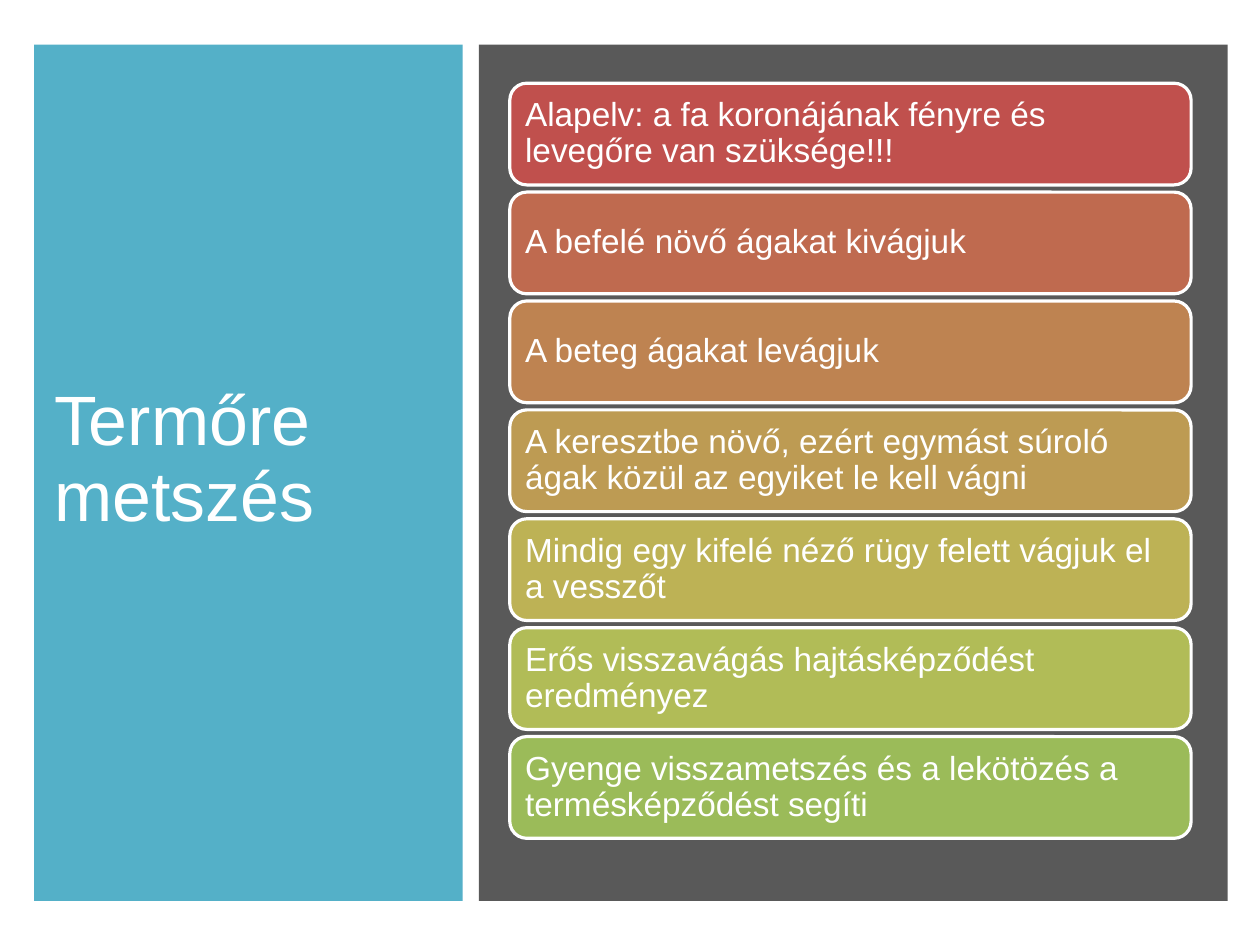
from dataclasses import dataclass

from lxml import etree
from pptx import Presentation
from pptx.dml.color import RGBColor
from pptx.enum import shapes, text
from pptx.oxml import ns
from pptx.util import Cm, Pt


@dataclass(frozen=True)
class Theme:
    font: str = "Arial"
    title_size: int = 44
    rule_size: int = 21
    line_spacing: float = 0.9
    light: str = "FFFFFF"
    title_panel: str = "4BACC6"
    rules_panel: str = "595959"
    rule_fills: tuple = ("C0504D", "BF6A4F", "BE8351", "BD9B53",
                         "BDB255", "B1BC57", "9BBB59")


THEME = Theme()

TITLE = "Termőre metszés"
RULES = (
    "Alapelv: a fa koronájának fényre és levegőre van szüksége!!!",
    "A befelé növő ágakat kivágjuk",
    "A beteg ágakat levágjuk",
    "A keresztbe növő, ezért egymást súroló ágak közül az egyiket le kell vágni",
    "Mindig egy kifelé néző rügy felett vágjuk el a vesszőt",
    "Erős visszavágás hajtásképződést eredményez",
    "Gyenge visszametszés és a lekötözés a termésképződést segíti",
)


def add_box(slide, kind, left, top, width, height, fill):
    shape = slide.shapes.add_shape(kind, left, top, width, height)
    shape.shadow.inherit = False
    shape.fill.solid()
    shape.fill.fore_color.rgb = RGBColor.from_string(fill)
    shape.line.fill.background()
    return shape


def write_text(shape, wording, size, inset):
    frame = shape.text_frame
    frame.text = wording
    frame.word_wrap = True
    frame.auto_size = text.MSO_AUTO_SIZE.NONE
    frame.vertical_anchor = text.MSO_ANCHOR.MIDDLE
    frame.margin_left = frame.margin_right = inset
    frame.margin_top = frame.margin_bottom = inset
    paragraph = frame.paragraphs[0]
    paragraph.alignment = text.PP_ALIGN.LEFT
    paragraph.line_spacing = THEME.line_spacing
    paragraph.font.name = THEME.font
    paragraph.font.size = Pt(size)
    paragraph.font.color.rgb = RGBColor.from_string(THEME.light)


def build_title_panel(slide, left, top, width, height):
    panel = add_box(slide, shapes.MSO_SHAPE.RECTANGLE,
                    left, top, width, height, THEME.title_panel)
    # Slightly transparent fill
    color = panel.element.spPr.find(".//" + ns.qn("a:srgbClr"))
    etree.SubElement(color, ns.qn("a:alpha"), val="95000")

    # Title in front of its panel
    title = slide.shapes.title
    title.element.addprevious(panel.element)
    title.left, title.top = left + Cm(0.44), top + Cm(0.79)
    title.width, title.height = width - Cm(0.97), height - Cm(2.1)
    write_text(title, TITLE, THEME.title_size, 0)


def build_rules_panel(slide, left, top, width, height):
    add_box(slide, shapes.MSO_SHAPE.RECTANGLE,
            left, top, width, height, THEME.rules_panel)

    # Evenly spaced pruning rules
    pitch = Cm(2.42)
    for index, (rule, fill) in enumerate(zip(RULES, THEME.rule_fills)):
        card = add_box(slide, shapes.MSO_SHAPE.ROUNDED_RECTANGLE,
                       left + Cm(0.69), top + Cm(0.86) + index * pitch,
                       width - Cm(1.5), Cm(2.26), fill)
        card.line.color.rgb = RGBColor.from_string(THEME.light)
        card.line.width = Pt(2)
        write_text(card, rule, THEME.rule_size, Cm(0.23))


def main():
    presentation = Presentation()
    presentation.slide_width = Cm(28)
    presentation.slide_height = Cm(21)
    slide = presentation.slides.add_slide(
        presentation.slide_layouts.get_by_name("Title Only"))

    panel_top, panel_height = Cm(0.99), Cm(19.03)
    build_title_panel(slide, Cm(0.76), panel_top, Cm(9.52), panel_height)
    build_rules_panel(slide, Cm(10.64), panel_top, Cm(16.64), panel_height)

    presentation.save("out.pptx")


if __name__ == "__main__":
    main()
